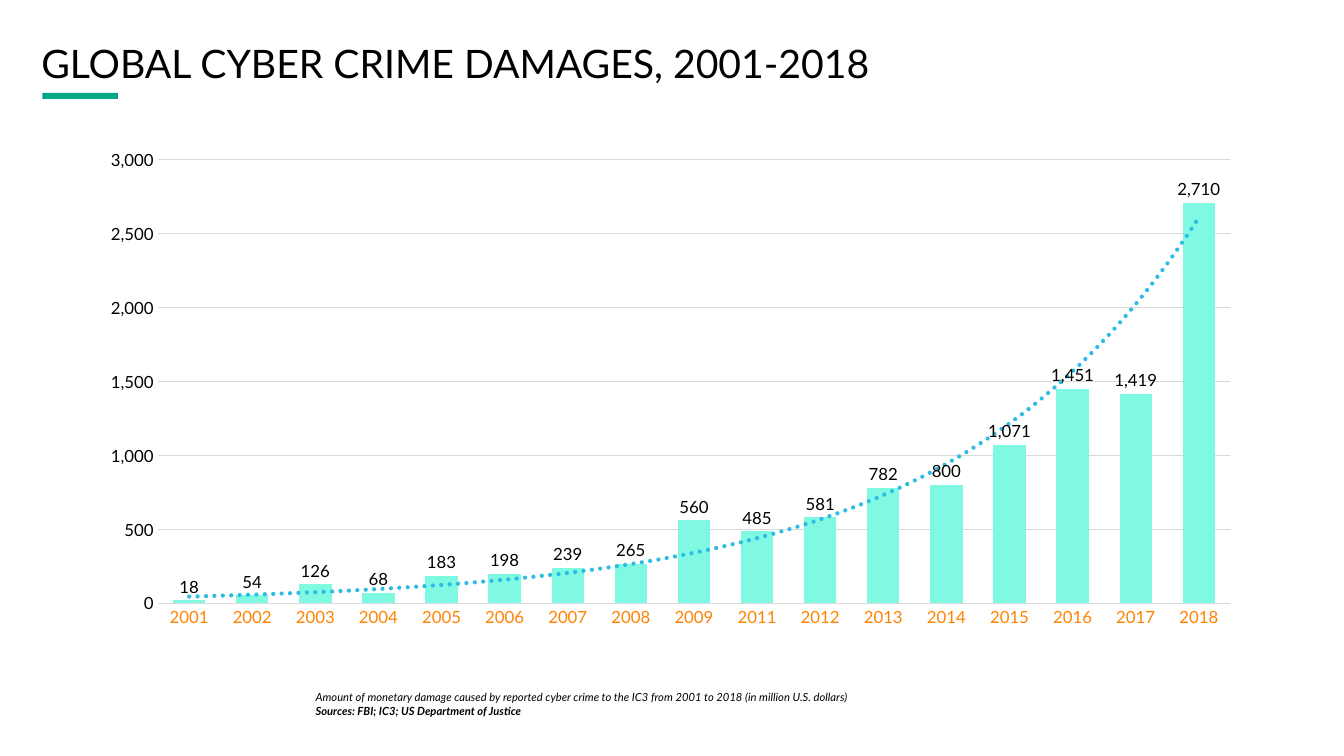
from lxml import etree
from pptx import Presentation
from pptx.chart.data import CategoryChartData
from pptx.dml.color import RGBColor
from pptx.enum.chart import XL_CHART_TYPE, XL_LABEL_POSITION, XL_TICK_MARK
from pptx.enum.shapes import MSO_SHAPE
from pptx.enum.text import MSO_ANCHOR, PP_ALIGN
from pptx.oxml import parse_xml
from pptx.oxml.ns import nsdecls, qn
from pptx.util import Pt

COLUMNS = XL_CHART_TYPE.COLUMN_CLUSTERED
OUTSIDE_END = XL_LABEL_POSITION.OUTSIDE_END
NO_TICK = XL_TICK_MARK.NONE
RECTANGLE = MSO_SHAPE.RECTANGLE
MIDDLE, TOP = MSO_ANCHOR.MIDDLE, MSO_ANCHOR.TOP
LEFT = PP_ALIGN.LEFT

FONT = "Lato"
COLORS = {
    "text": "000000", "background": "FFFFFF", "accent": "01A982",
    "column": "7FF9E2", "trend": "2CBCE4", "year": "FF8300", "grid": "D9D9D9",
}
NUMBER_FORMAT = "#,##0"
DAMAGES = {
    2001: 18, 2002: 54, 2003: 126, 2004: 68, 2005: 183, 2006: 198,
    2007: 239, 2008: 265, 2009: 560, 2011: 485, 2012: 581, 2013: 782,
    2014: 800, 2015: 1071, 2016: 1451, 2017: 1419, 2018: 2710,
}


def rgb(name):
    return RGBColor.from_string(COLORS[name])


def style_font(font, size, color="text", bold=False, italic=False):
    font.name = FONT
    font.size = Pt(size)
    font.bold = bold
    font.italic = italic
    font.color.rgb = rgb(color)


def write_text(frame, lines, size, inset=0, anchor=TOP, spacing=None, italic=False, bold_lines=()):
    frame.word_wrap = True
    frame.vertical_anchor = anchor
    frame.margin_left = frame.margin_right = Pt(inset)
    frame.margin_top = frame.margin_bottom = Pt(inset)
    for index, line in enumerate(lines):
        para = frame.paragraphs[0] if index == 0 else frame.add_paragraph()
        para.alignment = LEFT
        if spacing:
            para.line_spacing = spacing
        span = para.add_run()
        span.text = line
        style_font(span.font, size, italic=italic, bold=index in bold_lines)


def add_block(page, left, top, width, height, color):
    block = page.shapes.add_shape(RECTANGLE, Pt(left), Pt(top), Pt(width), Pt(height))
    block.shadow.inherit = False
    block.fill.solid()
    block.fill.fore_color.rgb = rgb(color)
    block.line.fill.background()
    return block


def add_heading(page, left, top, width, height):
    # Accent bar under the title's first letters
    add_block(page, left + 7.9, top + 35.3, 54, 4.3, "accent")
    title = page.shapes.title
    title.left, title.top, title.width, title.height = Pt(left), Pt(top), Pt(width), Pt(height)
    write_text(title.text_frame, ["GLOBAL CYBER CRIME DAMAGES, 2001-2018"], 28,
               inset=7.2, anchor=MIDDLE, spacing=0.9)


def add_source_note(page, left, top, width, height):
    note = add_block(page, left, top, width, height, "background")
    write_text(note.text_frame, [
        "Amount of monetary damage caused by reported cyber crime to the IC3 "
        "from 2001 to 2018 (in million U.S. dollars)",
        "Sources: FBI; IC3; US Department of Justice",
    ], 8, italic=True, bold_lines=(1,))


def set_plot_area(chart, **fractions):
    area = chart.plots[0]._element.getparent()
    for old in area.findall(qn("c:layout")):
        area.remove(old)
    layout = parse_xml(f'<c:layout {nsdecls("c")}><c:manualLayout>'
                       '<c:layoutTarget val="inner"/><c:xMode val="edge"/><c:yMode val="edge"/>'
                       '</c:manualLayout></c:layout>')
    for name, value in fractions.items():
        etree.SubElement(layout[0], qn(f"c:{name}"), val=str(value))
    area.insert(0, layout)


def add_trend_line(series):
    trend = parse_xml(
        f'<c:trendline {nsdecls("c", "a")}><c:spPr><a:ln w="{Pt(3)}" cap="rnd">'
        f'<a:solidFill><a:srgbClr val="{COLORS["trend"]}"/></a:solidFill>'
        '<a:prstDash val="sysDot"/></a:ln></c:spPr><c:trendlineType val="exp"/>'
        '<c:dispRSqr val="0"/><c:dispEq val="0"/></c:trendline>')
    series._element.find(qn("c:cat")).addprevious(trend)


def style_axis(axis, color):
    axis.major_tick_mark = axis.minor_tick_mark = NO_TICK
    style_font(axis.tick_labels.font, 12, color)


def style_line(line):
    line.color.rgb = rgb("grid")
    line.width = Pt(0.75)


def add_damage_chart(page, left, top, width, height):
    data = CategoryChartData(number_format=NUMBER_FORMAT)
    data.categories = [str(year) for year in DAMAGES]
    data.add_series("Series 1", DAMAGES.values())
    chart = page.shapes.add_chart(COLUMNS, Pt(left), Pt(top), Pt(width), Pt(height), data).chart
    chart.has_title = chart.has_legend = False
    style_font(chart.font, 10)
    set_plot_area(chart, x=0.06, y=0.04, w=0.92, h=0.89)

    # Axes
    years, amounts = chart.category_axis, chart.value_axis
    style_axis(years, "year")
    style_line(years.format.line)
    style_axis(amounts, "text")
    amounts.minimum_scale, amounts.maximum_scale, amounts.major_unit = 0, 3000, 500
    amounts.tick_labels.number_format = NUMBER_FORMAT
    amounts.tick_labels.number_format_is_linked = False
    amounts.format.line.fill.background()
    style_line(amounts.major_gridlines.format.line)

    # Columns, value labels and trend
    plot = chart.plots[0]
    plot.gap_width, plot.overlap = 95, -27
    plot.vary_by_categories = False
    series = plot.series[0]
    series.format.fill.solid()
    series.format.fill.fore_color.rgb = rgb("column")
    labels = series.data_labels
    labels.show_value = True
    labels.position = OUTSIDE_END
    labels.number_format = NUMBER_FORMAT
    labels.number_format_is_linked = False
    style_font(labels.font, 12)
    add_trend_line(series)


def main():
    deck = Presentation()
    deck.slide_width, deck.slide_height = Pt(960), Pt(540)
    page = deck.slides.add_slide(deck.slide_layouts.get_by_name("Title Only"))
    add_heading(page, 22.3, 31, 900, 31.7)
    add_source_note(page, 225.4, 493.2, 518.4, 19.4)
    add_damage_chart(page, 62.6, 100.1, 833, 355.7)
    deck.save("out.pptx")


if __name__ == "__main__":
    main()
